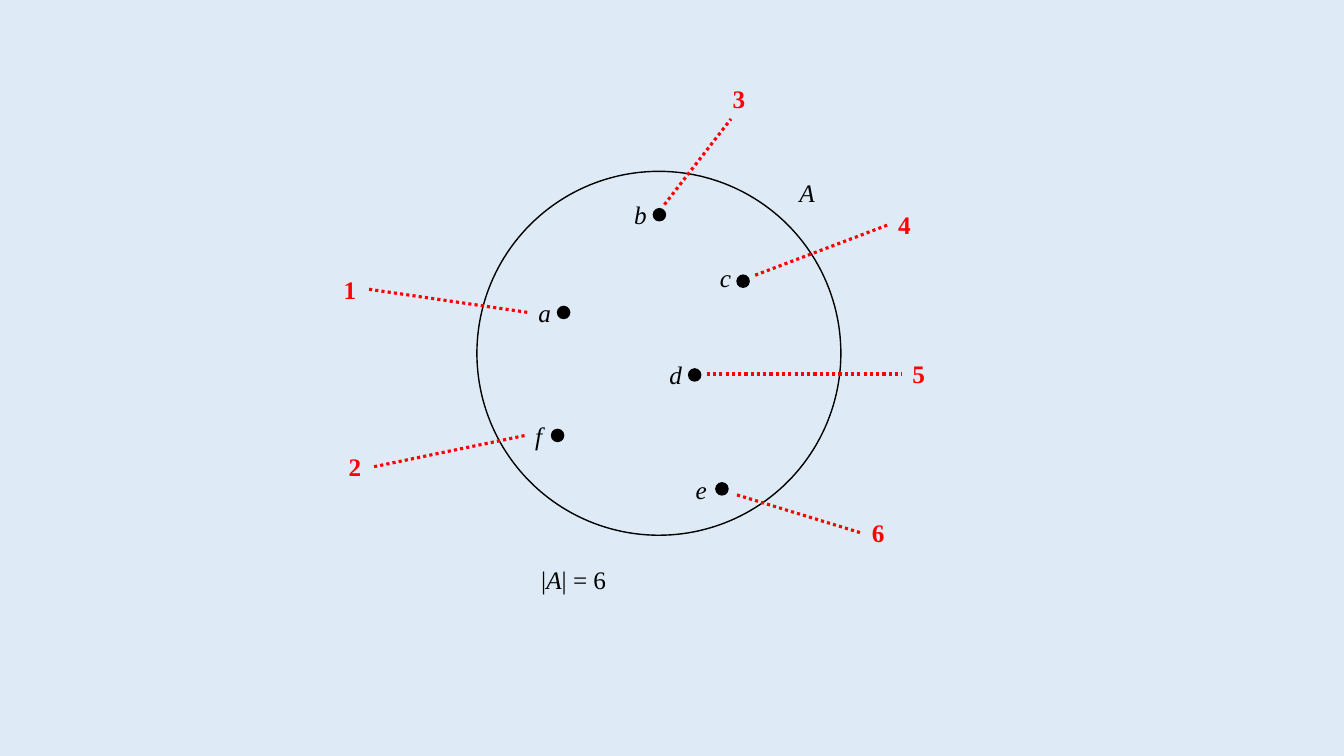
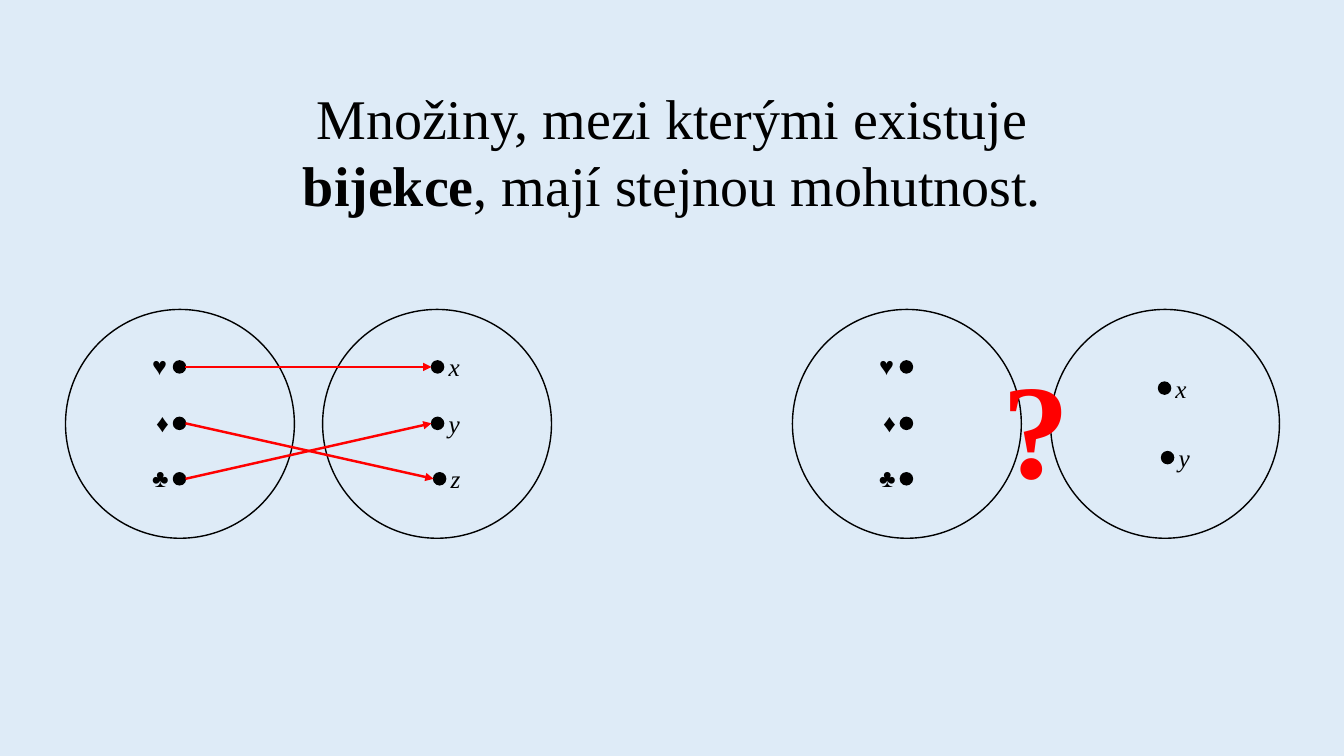
from pptx import Presentation
from pptx.dml.color import RGBColor
from pptx.enum.dml import MSO_LINE_DASH_STYLE as Dash
from pptx.enum.shapes import MSO_CONNECTOR_TYPE as Connector, MSO_SHAPE as Shape
from pptx.enum.text import MSO_AUTO_SIZE as AutoSize, PP_ALIGN as Align
from pptx.oxml.ns import qn
from pptx.util import Inches, Pt
from lxml.etree import SubElement

PALE_BLUE = RGBColor(0xDE, 0xEB, 0xF7)
BLACK = RGBColor(0, 0, 0)
RED = RGBColor(0xFF, 0, 0)
FONT = "Times New Roman"
DOT = 0.12
ROWS = (3.58, 4.14, 4.69)


class SetDiagram:
    """Holds the deck, the current page and the shared style."""

    def __init__(self):
        self.deck = Presentation()
        self.deck.slide_width = Inches(13.33)
        self.deck.slide_height = Inches(7.5)

    def new_page(self):
        self.page = self.deck.slides.add_slide(self.deck.slide_layouts[6])
        self.page.background.fill.solid()
        self.page.background.fill.fore_color.rgb = PALE_BLUE
        self.ungroup()

    def group(self):
        self.target = self.page.shapes.add_group_shape().shapes

    def ungroup(self):
        self.target = self.page.shapes

    def circle(self, left, top, size, filled=False):
        circle = self.target.add_shape(
            Shape.OVAL, Inches(left), Inches(top), Inches(size), Inches(size))
        circle.shadow.inherit = False
        if filled:
            circle.fill.solid()
            circle.fill.fore_color.rgb = BLACK
        else:
            circle.fill.background()
        circle.line.color.rgb = BLACK
        circle.line.width = Pt(1)

    def dot(self, left, top):
        self.circle(left, top, DOT, filled=True)

    def text(self, left, top, *spans, width=0.35, height=0.4, size=18,
             color=BLACK, align=Align.LEFT):
        """Each span is a (wording, style) pair; style is "", "b" or "i"."""
        box = self.target.add_textbox(
            Inches(left), Inches(top), Inches(width), Inches(height))
        frame = box.text_frame
        frame.word_wrap = True
        frame.auto_size = AutoSize.SHAPE_TO_FIT_TEXT
        para = frame.paragraphs[0]
        para.alignment = align
        for wording, style in spans:
            span = para.add_run()
            span.text = wording
            span.font.name = FONT
            span.font.size = Pt(size)
            span.font.color.rgb = color
            span.font.bold = style == "b"
            span.font.italic = style == "i"

    def line(self, start, end, weight, dash=None, arrow=False):
        line = self.target.add_connector(
            Connector.STRAIGHT, *(Inches(value) for value in (*start, *end)))
        line.line.color.rgb = RED
        line.line.width = Pt(weight)
        if dash:
            line.line.dash_style = dash
        properties = line.element.spPr
        if arrow:
            SubElement(properties.find(qn("a:ln")), qn("a:tailEnd"), type="triangle")
        SubElement(properties, qn("a:effectLst"))

    def suit_set(self, left):
        """Draws the set of card suits and returns its dots."""
        self.circle(left, 3.07, 2.27)
        dots = [(left + 1.07, top) for top in ROWS]
        for (x, y), suit, gap in zip(dots, "♥♦♣", (0.31, 0.27, 0.31)):
            self.dot(x, y)
            self.text(x - gap, y - 0.15, (suit, ""))
        return dots

    def letter_set(self, left, letters, dots):
        self.circle(left, 3.07, 2.27)
        for letter, (x, y) in zip(letters, dots):
            self.dot(x, y)
            self.text(x + 0.07, y - 0.14, (letter, "i"))


def counting_page(diagram):
    diagram.new_page()

    # Set A with its elements: letter, dot, label position
    diagram.group()
    diagram.circle(4.73, 1.7, 3.61)
    diagram.text(7.83, 1.71, ("A", "i"))
    for letter, dot, label, align in (
        ("a", (5.53, 3.04), (5.24, 2.9), Align.LEFT),
        ("b", (6.48, 2.07), (6.19, 1.93), Align.LEFT),
        ("c", (7.31, 2.73), (7.04, 2.55), Align.LEFT),
        ("d", (6.83, 3.66), (6.54, 3.52), Align.LEFT),
        ("e", (7.1, 4.79), (6.78, 4.66), Align.CENTER),
        ("f", (5.47, 4.26), (5.21, 4.12), Align.LEFT),
    ):
        diagram.dot(*dot)
        diagram.text(*label, (letter, "i"), align=align)
    diagram.ungroup()

    # Cardinality
    diagram.text(5.27, 5.55, ("|", ""), ("A", "i"), ("| = 6", ""), width=0.96)

    # Numbers and the dotted lines to the elements
    for number, place, start, end in (
        ("1", (3.31, 2.67), (3.66, 2.87), (5.24, 3.1)),
        ("2", (3.36, 4.43), (3.71, 4.63), (5.21, 4.32)),
        ("3", (7.14, 0.78), (6.59, 2.03), (7.25, 1.18)),
        ("4", (8.81, 2.03), (7.49, 2.73), (8.81, 2.23)),
        ("5", (8.95, 3.51), (7.01, 3.71), (8.95, 3.71)),
        ("6", (8.55, 5.08), (7.31, 4.91), (8.55, 5.29)),
    ):
        align = Align.RIGHT if number == "3" else Align.LEFT
        diagram.text(*place, (number, "b"), color=RED, align=align)
        diagram.line(start, end, 2.25, dash=Dash.ROUND_DOT)


def bijection_page(diagram):
    diagram.new_page()
    diagram.text(
        2.36, 0.78, ("Množiny, mezi kterými existuje ", ""), ("bijekce", "b"),
        (", mají stejnou mohutnost.", ""),
        width=8.61, height=1.45, size=40, align=Align.CENTER)

    # Two sets of equal size
    diagram.group()
    suits = diagram.suit_set(0.65)
    diagram.group()
    letters = list(zip((4.28, 4.28, 4.3), ROWS))
    diagram.letter_set(3.2, "xyz", letters)
    diagram.ungroup()

    # Arrows of the bijection, from dot edge to dot edge
    for source, goal in ((0, 0), (1, 2), (2, 1)):
        (x1, y1), (x2, y2) = suits[source], letters[goal]
        diagram.line((x1 + DOT, y1 + DOT / 2), (x2, y2 + DOT / 2), 1.75, arrow=True)

    # Two sets of different size
    diagram.group()
    diagram.letter_set(10.42, "xy", ((11.49, 3.79), (11.52, 4.48)))
    diagram.suit_set(7.86)
    diagram.ungroup()
    diagram.text(9.8, 3.36, ("?", "b"), width=0.96, height=1.72, size=96,
                 color=RED, align=Align.CENTER)


def main():
    diagram = SetDiagram()
    counting_page(diagram)
    bijection_page(diagram)
    diagram.deck.save("out.pptx")


if __name__ == "__main__":
    main()
